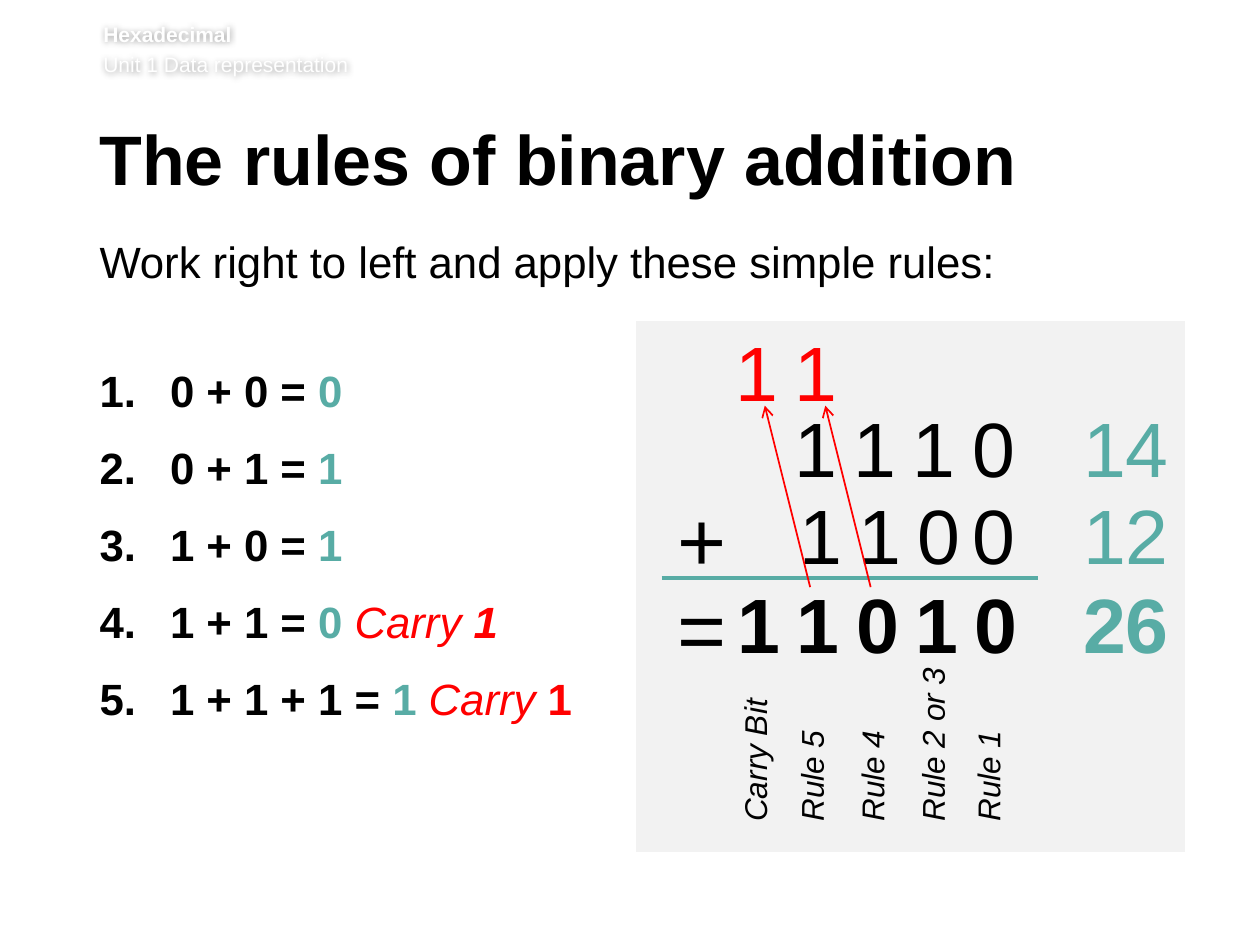
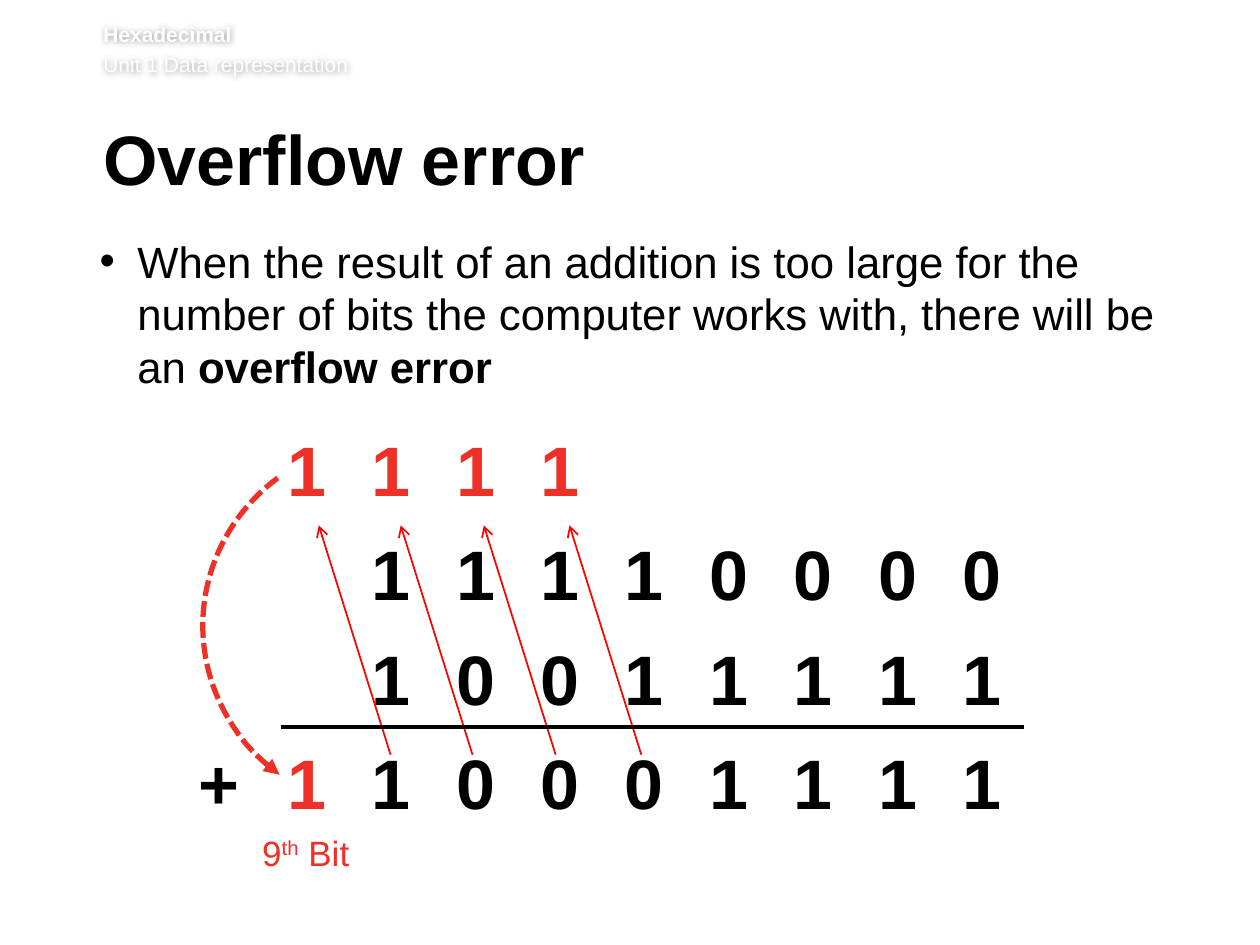
from lxml import etree
from pptx import Presentation
from pptx import util as u
from pptx.dml.color import RGBColor
from pptx.enum import dml, shapes, text
from pptx.oxml import ns

BLACK, WHITE, PANEL = "000000", "FFFFFF", "F2F2F2"
TEAL, RED, CARRY = "58ACA5", "FF0000", "EE3127"
PLAIN_TABLE_STYLE = "{2D5ABB26-0587-4C30-8999-92F81FD0307C}"
Inches, Pt = u.Inches, u.Pt


def format_font(font, size, colour, bold=False, italic=False):
    font.name, font.size = "Arial", Pt(size)
    font.bold, font.italic = bold, italic
    font.color.rgb = RGBColor.from_string(colour)


def add_line(slide, start, end, colour, width, arrow=False):
    line = slide.shapes.add_connector(
        shapes.MSO_CONNECTOR.STRAIGHT, *map(Inches, start + end))
    line.line.color.rgb = RGBColor.from_string(colour)
    line.line.width = Pt(width)
    if arrow:
        etree.SubElement(line.line._get_or_add_ln(), ns.qn("a:tailEnd"), type="arrow")
    etree.SubElement(line._element.spPr, ns.qn("a:effectLst"))


presentation = Presentation()
presentation.slide_width, presentation.slide_height = Inches(10), Inches(7.5)
layout = presentation.slide_layouts[1]

# Each paragraph: bullet, hanging indent, space after, runs (text, colour, bold, italic)
rules = [
    [("0 + 0 = ", BLACK, True, False), ("0", TEAL, True, False)],
    [("0 + 1 = ", BLACK, True, False), ("1", TEAL, True, False)],
    [("1 + 0 = ", BLACK, True, False), ("1", TEAL, True, False)],
    [("1 + 1 = ", BLACK, True, False), ("0 ", TEAL, True, False),
     ("Carry ", RED, False, True), ("1", RED, True, True)],
    [("1 + 1 + 1 = ", BLACK, True, False), ("1 ", TEAL, True, False),
     ("Carry", RED, False, True), (" 1", RED, True, False)],
]
intro = [("Work right to left and apply these simple rules:", BLACK, False, False)]
overflow = [
    ("When the result of an addition is too large for the number of bits "
     "the computer works with, there will be an ", BLACK, False, False),
    ("overflow error", BLACK, True, False),
]
number = ("buAutoNum", {"type": "arabicPeriod"})
contents = [
    ("The rules of binary addition", 0.79,
     [(("buNone", {}), 0, 44, intro)] + [(number, 0.56, 14, rule) for rule in rules]),
    ("Overflow error", 0.82, [(("buChar", {"char": "•"}), 0.3, 14, overflow)]),
]

# Titles and body text
for title_text, title_left, paragraphs in contents:
    slide = presentation.slides.add_slide(layout)
    title, body = slide.placeholders
    title.left, title.top, title.width, title.height = map(
        Inches, (title_left, 0.99, 8.55, 0.73))
    body.left, body.top, body.width, body.height = map(
        Inches, (0.79, 1.86, 8.53, 3.78))
    for placeholder in (title, body):
        frame = placeholder.text_frame
        frame.margin_left = 0
        frame.vertical_anchor = text.MSO_ANCHOR.TOP
        frame.auto_size = text.MSO_AUTO_SIZE.NONE
    body.text_frame.margin_top = 0

    title.text_frame.text = title_text
    paragraph = title.text_frame.paragraphs[0]
    paragraph.alignment = text.PP_ALIGN.LEFT
    paragraph.line_spacing = Pt(39)
    format_font(paragraph.runs[0].font, 40, BLACK, True)

    for index, ((bullet, attributes), indent, space_after, runs) in enumerate(paragraphs):
        frame = body.text_frame
        paragraph = frame.add_paragraph() if index else frame.paragraphs[0]
        properties = paragraph._p.get_or_add_pPr()
        properties.set("marL", str(Inches(indent)))
        properties.set("indent", str(-Inches(indent)))
        etree.SubElement(properties, ns.qn("a:" + bullet), **attributes)
        paragraph.line_spacing = Pt(30)
        paragraph.space_before, paragraph.space_after = Pt(0), Pt(space_after)
        for run_text, colour, bold, italic in runs:
            run = paragraph.add_run()
            run.text = run_text
            format_font(run.font, 25, colour, bold, italic)

addition_slide, overflow_slide = presentation.slides

# Header with a soft shadow, moved to the layout so that both slides share it
header = addition_slide.shapes.add_textbox(*map(Inches, (0.82, 0.17, 8.82, 0.49)))
frame = header.text_frame
frame.word_wrap = True
frame.margin_left = frame.margin_top = frame.margin_right = 0
frame.text = "Hexadecimal\nUnit 1 Data representation"
for paragraph, bold, space_before in zip(frame.paragraphs, (True, False), (0, 2.9)):
    paragraph.space_before = Pt(space_before)
    format_font(paragraph.runs[0].font, 12, WHITE, bold)
effects = etree.SubElement(header._element.spPr, ns.qn("a:effectLst"))
shadow = etree.SubElement(effects, ns.qn("a:outerShdw"), blurRad=str(Pt(4)), dist="0",
                          algn="ctr", rotWithShape="0")
shadow_colour = etree.SubElement(shadow, ns.qn("a:srgbClr"), val=BLACK)
etree.SubElement(shadow_colour, ns.qn("a:alpha"), val="40000")
layout.shapes._spTree.append(header._element)

# Slide 1: worked addition
panel = addition_slide.shapes.add_shape(
    shapes.MSO_SHAPE.RECTANGLE, *map(Inches, (5.03, 2.53, 4.39, 4.25)))
panel.shadow.inherit = False
panel.fill.solid()
panel.fill.fore_color.rgb = RGBColor.from_string(PANEL)
panel.line.color.rgb = RGBColor.from_string(WHITE)
panel.line.width = Pt(2)

# Left, top, digits, colour, bold
digit_rows = [
    (5.73, 2.53, "11", RED, False),
    (6.2, 3.13, "1110", BLACK, False),
    (6.24, 3.82, "110", BLACK, False),
    (7.61, 3.82, "0", BLACK, False),
    (5.75, 4.53, "11010", BLACK, True),
]
labels = [(left + 0.47 * column, top, 0.55, digit, 44, colour, bold)
          for left, top, digits, colour, bold in digit_rows
          for column, digit in enumerate(digits)]
labels += [(5.28, 3.82, 0.59, "+", 48, BLACK, False),
           (5.28, 4.53, 0.59, "=", 48, BLACK, False)]
labels += [(8.49, 3.13, 0.89, "14", 44, TEAL, False),
           (8.49, 3.82, 0.89, "12", 44, TEAL, False),
           (8.49, 4.53, 0.89, "26", 44, TEAL, True)]
for left, top, width, label, size, colour, bold in labels:
    box = addition_slide.shapes.add_textbox(
        *map(Inches, (left, top, width, 0.84 if size == 44 else 0.91)))
    box.text_frame.word_wrap = False
    box.text_frame.auto_size = text.MSO_AUTO_SIZE.SHAPE_TO_FIT_TEXT
    box.text_frame.text = label
    paragraph = box.text_frame.paragraphs[0]
    paragraph.alignment = text.PP_ALIGN.CENTER
    format_font(paragraph.runs[0].font, size, colour, bold)

rule_labels = [("Carry Bit", 5.79, 1.08), ("Rule 5", 6.24, 0.83), ("Rule 4", 6.72, 0.83),
               ("Rule 2 or 3", 7.2, 1.34), ("Rule 1", 7.64, 0.83)]
for label, left, height in rule_labels:
    box = addition_slide.shapes.add_textbox(
        *map(Inches, (left, 6.62 - height, 0.5, height)))
    box.text_frame.word_wrap = False
    box.text_frame.auto_size = text.MSO_AUTO_SIZE.SHAPE_TO_FIT_TEXT
    box.text_frame._txBody.bodyPr.set("vert", "vert270")
    box.text_frame.text = label
    format_font(box.text_frame.paragraphs[0].runs[0].font, 18, BLACK, italic=True)

add_line(addition_slide, (5.25, 4.59), (8.24, 4.59), TEAL, 2.25)
for left in (6.07, 6.55):
    add_line(addition_slide, (left + 0.36, 4.66), (left, 3.22), RED, 1, arrow=True)

# Slide 2: eight-bit addition with a ninth bit
bit_rows = [" 1111     ", "  11110000", "  10011111", "+110001111"]
table = overflow_slide.shapes.add_table(
    4, 10, *map(Inches, (1.37, 3.33, 6.75, 3.32))).table
table.first_row = table.horz_banding = False
table._tbl.tblPr.find(ns.qn("a:tableStyleId")).text = PLAIN_TABLE_STYLE
for index, column in enumerate(table.columns):
    column.width = Inches(0.67 if index else 0.73)
for row_index, (row, bits) in enumerate(zip(table.rows, bit_rows)):
    row.height = Inches(0.83)
    for column_index, (cell, bit) in enumerate(zip(row.cells, bits)):
        cell.fill.background()
        if bit == " ":
            continue
        cell.vertical_anchor = text.MSO_ANCHOR.MIDDLE
        cell.margin_left = cell.margin_right = Inches(0.17)
        cell.margin_top = cell.margin_bottom = Inches(0.09)
        cell.text_frame.text = bit
        paragraph = cell.text_frame.paragraphs[0]
        paragraph.alignment = text.PP_ALIGN.CENTER
        is_carry = row_index == 0 or column_index == 1
        format_font(paragraph.runs[0].font, 40, CARRY if is_carry else BLACK, True)

ninth_bit = overflow_slide.shapes.add_textbox(*map(Inches, (1.92, 6.55, 0.95, 0.44)))
ninth_bit.text_frame.word_wrap = True
paragraph = ninth_bit.text_frame.paragraphs[0]
paragraph.alignment = text.PP_ALIGN.RIGHT
for run_text in ("9", "th", " Bit"):
    run = paragraph.add_run()
    run.text = run_text
    format_font(run.font, 20, CARRY)
paragraph.runs[1].font._element.set("baseline", "30000")

for left in (2.53, 3.18, 3.84, 4.52):
    add_line(overflow_slide, (left + 0.57, 5.99), (left, 4.17), RED, 1, arrow=True)

arc = overflow_slide.shapes.add_shape(
    shapes.MSO_SHAPE.ARC, *map(Inches, (1.61, 3.49, 3.03, 2.95)))
arc.shadow.inherit = False
# Adjustments count 0.6 to the degree
arc.adjustments[0], arc.adjustments[1] = 127.4 * 0.6, 233.3 * 0.6
arc.fill.background()
arc.line.color.rgb = RGBColor.from_string(CARRY)
arc.line.width = Pt(3)
arc.line.dash_style = dml.MSO_LINE.SQUARE_DOT
etree.SubElement(arc.line._get_or_add_ln(), ns.qn("a:headEnd"), type="triangle")

add_line(overflow_slide, (2.23, 5.77), (8.13, 5.77), BLACK, 2.25)

presentation.save("out.pptx")
